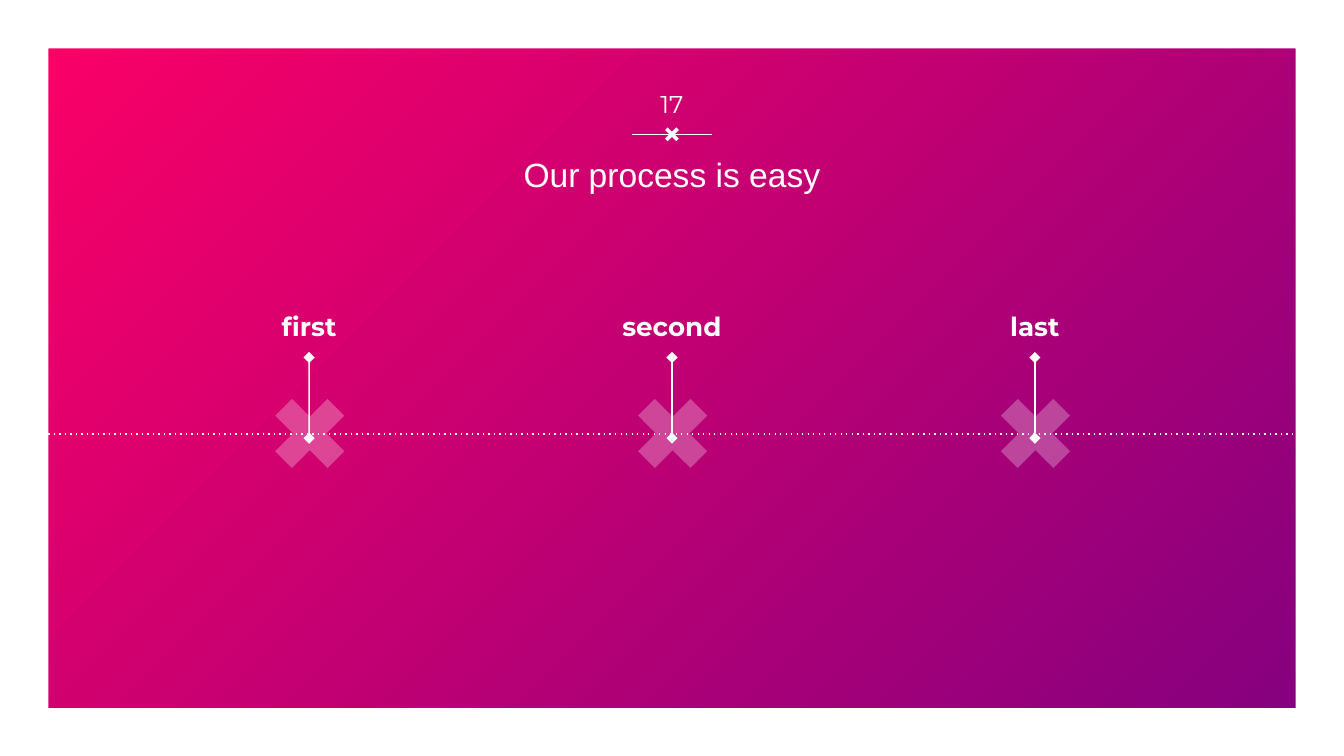
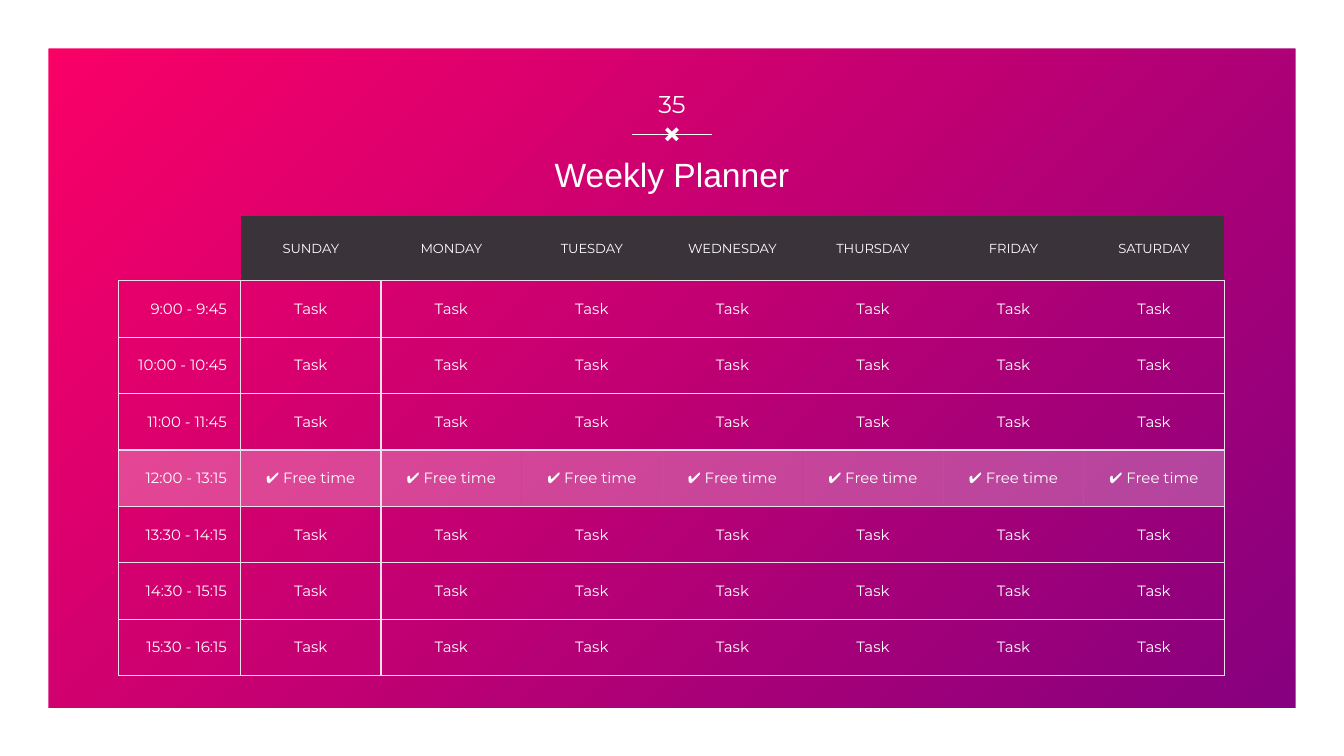
import pptx
import pptx.dml.color
import pptx.enum.shapes
import pptx.enum.text
import pptx.oxml
import pptx.oxml.ns
import pptx.util

Inches = pptx.util.Inches
SHAPE = pptx.enum.shapes.MSO_SHAPE
ALIGN = pptx.enum.text.PP_ALIGN
ANCHOR = pptx.enum.text.MSO_ANCHOR
qn = pptx.oxml.ns.qn

WHITE, PINK, PURPLE = "FFFFFF", "FF0066", "800080"
DARK, RULE = "3A343A", "E9E0E9"
BODY_FONT, TITLE_FONT = "Montserrat", "Arial"
GLASS = 27  # opacity of the pale overlays, in percent
NO_TABLE_STYLE = "{2D5ABB26-0587-4C30-8999-92F81FD0307C}"


def rgb(color):
    return pptx.dml.color.RGBColor.from_string(color)


def box(x, y, w, h):
    return Inches(x), Inches(y), Inches(w), Inches(h)


def sub(parent, tag, **attrs):
    """Append a DrawingML child element with the given attributes."""
    child = parent.makeelement(qn(tag), attrs)
    parent.append(child)
    return child


def paint(fill, color, opacity=100):
    fill.solid()
    fill.fore_color.rgb = rgb(color)
    if opacity < 100:
        clr = next(fill._xPr.iter(qn("a:srgbClr")))
        sub(clr, "a:alpha", val=str(opacity * 1000))


def write(tf, text, size=8, font=BODY_FONT, color=WHITE, bold=False,
          align=ALIGN.CENTER):
    p = tf.paragraphs[0]
    p.alignment = align
    r = p.add_run()
    r.text = text
    r.font.size = pptx.util.Pt(size)
    r.font.name = font
    r.font.bold = bold
    r.font.color.rgb = rgb(color)


def set_borders(cell, sides):
    """Rule the given sides, a string made of the letters L, R, T and B."""
    tcPr = cell._tc.get_or_add_tcPr()
    for i, side in enumerate(sides):
        ln = tcPr.makeelement(qn("a:ln" + side), {"w": "9525"})
        sub(sub(ln, "a:solidFill"), "a:srgbClr", val=RULE)
        tcPr.insert(i, ln)


class Deck:
    def __init__(self):
        self.prs = pptx.Presentation()
        self.prs.slide_width = Inches(10)
        self.prs.slide_height = Inches(10) * 9 // 16
        self.layout = self.prs.slide_layouts[5]
        self.s = None
        fill = self.prs.slide_master.background.fill
        fill.gradient()
        fill.gradient_angle = 315
        for stop, color in zip(fill.gradient_stops, (PINK, PURPLE)):
            stop.color.rgb = rgb(color)

    def slide(self, number, title):
        first = self.s is None
        self.s = self.prs.slides.add_slide(self.layout)
        if first:
            self.decorate_layout()
        sp = self.s.shapes.title
        sp.left, sp.top, sp.width, sp.height = box(0.36, 1.08, 9.28, 0.43)
        self.frame_text(sp.text_frame, ANCHOR.MIDDLE)
        write(sp.text_frame, title, size=18, font=TITLE_FONT)
        self.text(4.7, 0.56, 0.6, 0.43, number, anchor=ANCHOR.MIDDLE, size=13)

    def decorate_layout(self):
        """Put the white frame and the title ornament on the shared layout."""
        border = self.shape(SHAPE.FRAME, 0, 0, 10, 5.63)
        border.adjustments[0] = 0.36 / 5.63
        rule = self.line(4.7, 1, 5.3, 1)
        cross = self.shape(SHAPE.MATH_MULTIPLY, 4.92, 0.92, 0.16, 0.16)
        cross.adjustments[0] = 0.17
        for sp in (border, rule, cross):
            self.layout.shapes._spTree.append(sp._element)

    def frame_text(self, tf, anchor):
        tf.word_wrap = True
        tf.auto_size = pptx.enum.text.MSO_AUTO_SIZE.NONE
        tf.vertical_anchor = anchor
        tf.margin_left = tf.margin_right = Inches(0.1)
        tf.margin_top = tf.margin_bottom = Inches(0.1)

    def text(self, x, y, w, h, text, anchor=ANCHOR.TOP, **style):
        sp = self.s.shapes.add_textbox(*box(x, y, w, h))
        self.frame_text(sp.text_frame, anchor)
        write(sp.text_frame, text, **style)
        return sp

    def shape(self, kind, x, y, w, h, opacity=100):
        sp = self.s.shapes.add_shape(kind, *box(x, y, w, h))
        sp.shadow.inherit = False
        paint(sp.fill, WHITE, opacity)
        sp.line.fill.background()
        return sp

    def line(self, x1, y1, x2, y2, dash=None, ends=None):
        cxn = self.s.shapes.add_connector(
            pptx.enum.shapes.MSO_CONNECTOR.STRAIGHT,
            Inches(x1), Inches(y1), Inches(x2), Inches(y2))
        cxn.line.width = pptx.util.Pt(0.75)
        cxn.line.color.rgb = rgb(WHITE)
        ln = cxn.line._get_or_add_ln()
        if dash:
            sub(ln, "a:prstDash", val=dash)
        if ends:
            sub(ln, "a:headEnd", type=ends)
            sub(ln, "a:tailEnd", type=ends)
        sub(cxn._element.spPr, "a:effectLst")
        return cxn

    def table(self, x, y, widths, heights):
        frame = self.s.shapes.add_table(
            len(heights), len(widths), Inches(x), Inches(y),
            sum(widths), sum(heights))
        table = frame.table
        table.first_row = table.horz_banding = False
        next(frame._element.iter(qn("a:tableStyleId"))).text = NO_TABLE_STYLE
        for col, width in zip(table.columns, widths):
            col.width = width
        for row, height in zip(table.rows, heights):
            row.height = height
        return table

    def cell(self, cell, text, fill=None, opacity=100, sides="", **style):
        cell.vertical_anchor = ANCHOR.MIDDLE
        cell.margin_left = cell.margin_right = Inches(0.1)
        # An empty cell needs no padding, so it cannot stretch its row
        cell.margin_top = cell.margin_bottom = Inches(0.1 if text else 0)
        if text:
            write(cell.text_frame, text, **style)
        if fill:
            paint(cell.fill, fill, opacity)
        else:
            cell.fill.background()
        set_borders(cell, sides)


def process_slide(deck):
    deck.slide("17", "Our process is easy")

    # Timeline
    deck.line(-0.01, 3.23, 10.01, 3.23, dash="dot")

    # Steps
    for i, step in enumerate(("first", "second", "last")):
        center = 2.3 + 2.7 * i
        deck.shape(SHAPE.MATH_MULTIPLY, center - 0.37, 2.85, 0.75, 0.75,
                   opacity=GLASS)
        label = deck.text(center - 0.68, 2.21, 1.36, 0.45, step,
                          size=14, bold=True)
        pin = deck.line(center, 3.26, center, 2.66, ends="diamond")
        pin.end_connect(label, 2)


def planner_slide(deck):
    deck.slide("35", "Weekly Planner")
    days = ("SUNDAY", "MONDAY", "TUESDAY", "WEDNESDAY", "THURSDAY", "FRIDAY",
            "SATURDAY")
    times = ("9:00 - 9:45", "10:00 - 10:45", "11:00 - 11:45", "12:00 - 13:15",
             "13:30 - 14:15", "14:30 - 15:15", "15:30 - 16:15")
    break_time = "12:00 - 13:15"
    table = deck.table(0.88, 1.61,
                       [Inches(0.91)] + [Inches(7.32) // 7] * len(days),
                       [Inches(0.48)] + [Inches(0.42)] * len(times))

    # Day names
    deck.cell(table.cell(0, 0), "", sides="B")
    for col, day in enumerate(days, 1):
        deck.cell(table.cell(0, col), day, fill=DARK, sides="B", size=7)

    # Time slots
    for row, time in enumerate(times, 1):
        free = time == break_time
        look = dict(fill=WHITE, opacity=GLASS) if free else {}
        deck.cell(table.cell(row, 0), time, sides="LRTB", align=ALIGN.RIGHT,
                  **look)
        for col in range(1, len(days) + 1):
            sides = {1: "LTB", len(days): "RTB"}.get(col, "TB")
            deck.cell(table.cell(row, col), "✔ Free time" if free else "Task",
                      sides=sides, **look)


def main():
    deck = Deck()
    process_slide(deck)
    planner_slide(deck)
    deck.prs.save("out.pptx")


if __name__ == "__main__":
    main()
